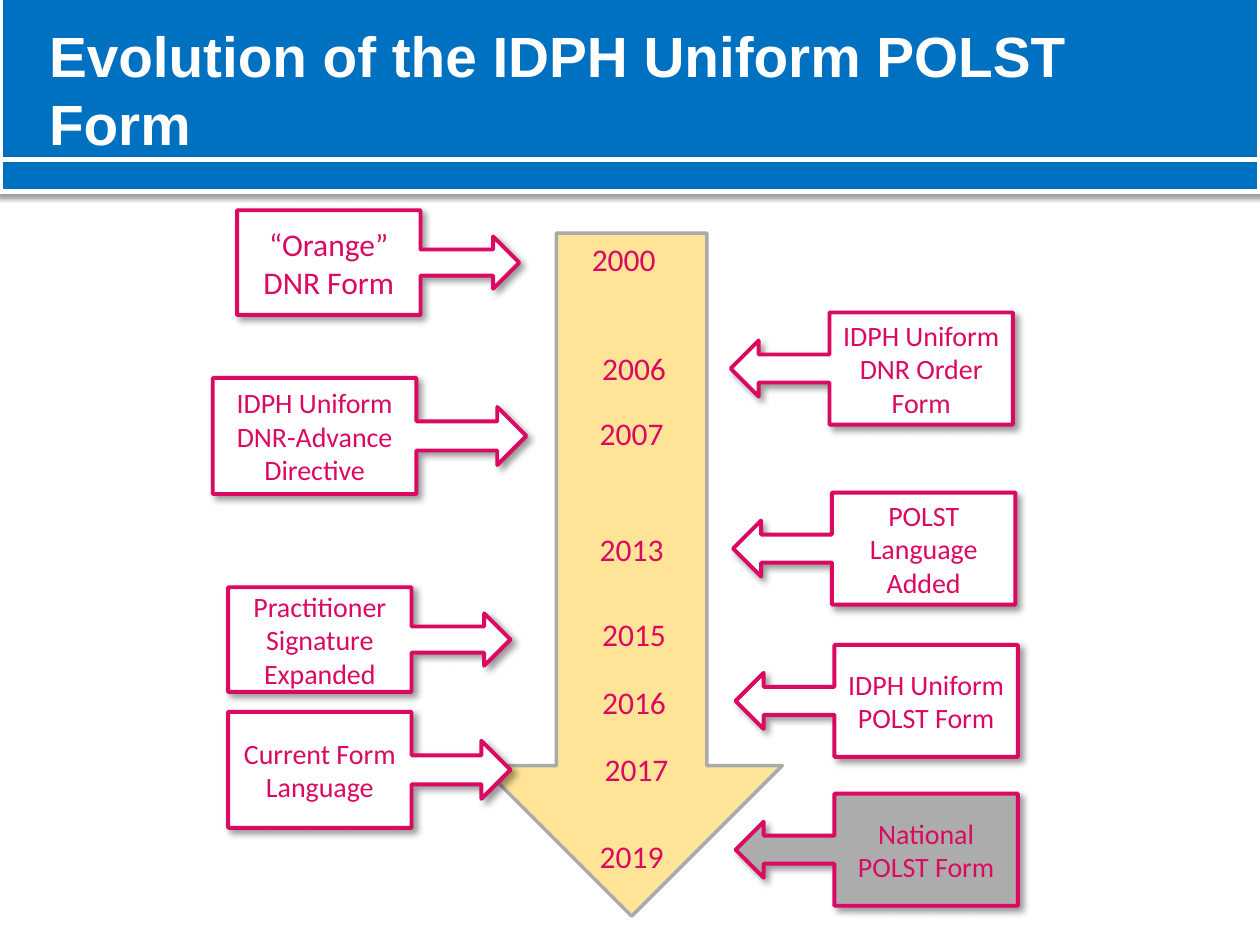
from dataclasses import dataclass

import pptx
import pptx.dml.color
import pptx.enum.shapes
import pptx.enum.text
import pptx.oxml
import pptx.oxml.ns
import pptx.util
from pptx.util import Cm

Geometry = pptx.enum.shapes.MSO_SHAPE
Anchor = pptx.enum.text.MSO_ANCHOR
Align = pptx.enum.text.PP_ALIGN


@dataclass(frozen=True)
class Theme:
    blue: str = "0070C0"
    white: str = "FFFFFF"
    magenta: str = "DB0962"
    sand: str = "FFE497"
    grey: str = "ACACAC"
    outline: str = "AAAAAA"
    title_font: str = "Arial"
    body_font: str = "Calibri"
    title_size: float = 32.4
    large_size: float = 18
    small_size: float = 16


def rgb(value):
    return pptx.dml.color.RGBColor.from_string(value)


def add_shadow(shape, opacity, blur, distance, angle):
    """Blur and distance are points, opacity is percent, angle is degrees."""
    shape.shadow.inherit = False
    effects = shape._element.spPr.find(pptx.oxml.ns.qn("a:effectLst"))
    effects.append(pptx.oxml.parse_xml(
        f'<a:outerShdw {pptx.oxml.ns.nsdecls("a")} blurRad="{pptx.util.Pt(blur)}" '
        f'dist="{pptx.util.Pt(distance)}" dir="{angle * 60000}" algn="t" rotWithShape="0">'
        f'<a:srgbClr val="000000"><a:alpha val="{opacity * 1000}"/></a:srgbClr>'
        f'</a:outerShdw>'))


class TimelineSlide:
    def __init__(self, slide, theme):
        self.slide = slide
        self.theme = theme

    def shape(self, geometry, box, fill, line, line_width):
        shape = self.slide.shapes.add_shape(geometry, *map(Cm, box))
        shape.shadow.inherit = False
        shape.fill.solid()
        shape.fill.fore_color.rgb = rgb(fill)
        shape.line.color.rgb = rgb(line)
        shape.line.width = pptx.util.Pt(line_width)
        shape.line._get_or_add_ln().append(
            pptx.oxml.parse_xml(f'<a:round {pptx.oxml.ns.nsdecls("a")}/>'))
        return shape

    def set_text(self, shape, text, size, color, font, bold=False, align=Align.LEFT,
                 anchor=Anchor.TOP):
        frame = shape.text_frame
        frame.word_wrap = True
        frame.vertical_anchor = anchor
        frame.text = text
        for paragraph in frame.paragraphs:
            paragraph.alignment = align
            paragraph.font.size = pptx.util.Pt(size)
            paragraph.font.name = font
            paragraph.font.bold = bold
            paragraph.font.color.rgb = rgb(color)

    def band(self, top, height):
        band = self.shape(Geometry.RECTANGLE, (0, top, 25.4, height),
                          self.theme.blue, self.theme.white, 3)
        add_shadow(band, 38, 3.1, 1.6, 90)

    def title(self, text, box):
        title = self.slide.shapes.add_textbox(*map(Cm, box))
        self.set_text(title, text, self.theme.title_size, self.theme.white,
                      self.theme.title_font, bold=True, anchor=Anchor.MIDDLE)

    def time_arrow(self, box):
        self.shape(Geometry.DOWN_ARROW, box, self.theme.sand, self.theme.outline, 2)

    def callout(self, geometry, box, text, size, fill):
        callout = self.shape(geometry, box, fill, self.theme.magenta, 2.25)
        add_shadow(callout, 40, 4, 3, 45)
        self.set_text(callout, text, size, self.theme.magenta, self.theme.body_font,
                      align=Align.CENTER, anchor=Anchor.MIDDLE)

    def year(self, text, left, top):
        label = self.slide.shapes.add_textbox(Cm(left), Cm(top), Cm(2.11), Cm(1.02))
        self.set_text(label, text, self.theme.large_size, self.theme.magenta,
                      self.theme.body_font)


def main():
    theme = Theme()
    small, large = theme.small_size, theme.large_size
    # left, top, width, height, text, size
    left_callouts = [
        (4.78, 4.24, 5.69, 2.11, "“Orange”\nDNR Form", large),
        (4.29, 7.62, 6.32, 2.34, "IDPH Uniform DNR-Advance Directive", small),
        (4.6, 11.84, 5.69, 2.11, "Practitioner Signature Expanded", small),
        (4.6, 14.35, 5.69, 2.34, "Current Form Language", small),
    ]
    # left, top, text, fill
    right_callouts = [
        (14.73, 6.3, "IDPH Uniform DNR Order Form", theme.white),
        (14.78, 9.93, "POLST Language Added", theme.white),
        (14.83, 13, "IDPH Uniform POLST Form", theme.white),
        (14.83, 16, "National POLST Form", theme.grey),
    ]
    years = [
        ("2000", 11.68, 4.72), ("2006", 11.89, 6.91),
        ("2007", 11.84, 8.23), ("2013", 11.84, 10.57),
        ("2015", 11.89, 12.27), ("2016", 11.89, 13.64),
        ("2017", 11.94, 14.99), ("2019", 11.84, 16.74),
    ]

    presentation = pptx.Presentation()
    presentation.slide_width, presentation.slide_height = Cm(25.4), Cm(19.05)
    slide = presentation.slides.add_slide(presentation.slide_layouts[6])
    timeline = TimelineSlide(slide, theme)

    timeline.band(-0.13, 3.35)
    timeline.band(3.22, 0.64)
    timeline.title("Evolution of the IDPH Uniform POLST Form", (0.74, 0.2, 23.93, 3.18))
    timeline.time_arrow((9.7, 4.7, 6.07, 13.77))
    for *box, text, size in left_callouts:
        timeline.callout(Geometry.RIGHT_ARROW_CALLOUT, box, text, size, theme.white)
    for left, top, text, fill in right_callouts:
        timeline.callout(Geometry.LEFT_ARROW_CALLOUT, (left, top, 5.69, 2.26),
                         text, small, fill)
    for text, left, top in years:
        timeline.year(text, left, top)

    presentation.save("out.pptx")


if __name__ == "__main__":
    main()
